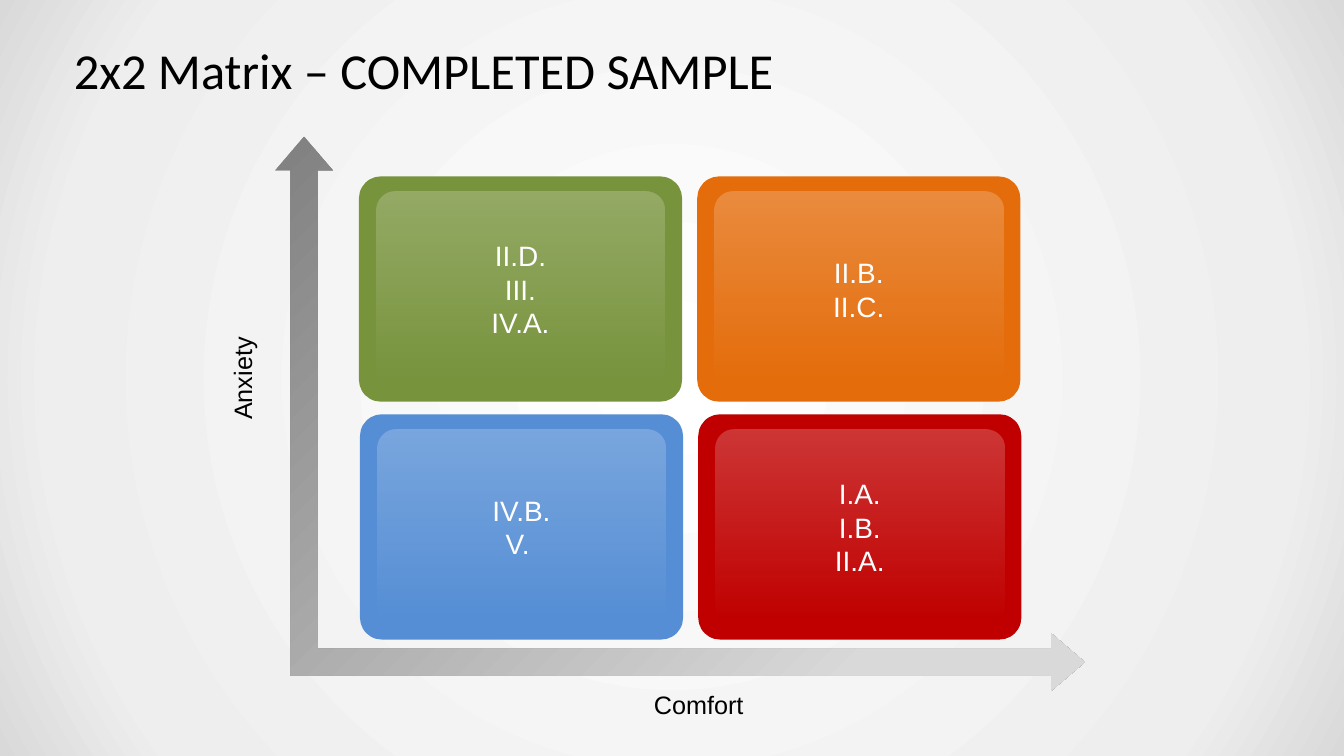
from lxml import etree
from pptx import Presentation, util as u
from pptx.dml.color import RGBColor
from pptx.enum import shapes, text
from pptx.oxml.ns import qn

# Content: quadrants as (column, row, colour, lines)
TITLE = "2x2 Matrix – COMPLETED SAMPLE"
QUADRANTS = [
    (0, 1, "blue", ["IV.B.", "V. "]),
    (1, 1, "red", ["I.A.", "I.B.", "II.A."]),
    (0, 0, "green", ["II.D.", "III.", "IV.A."]),
    (1, 0, "orange", ["II.B.", "II.C."]),
]
AXIS_LABELS = [
    ("Anxiety", (4.45, 6.67, 0.81, 1.76), "vert270", text.PP_ALIGN.LEFT),
    ("Comfort", (12.86, 13.62, 2, 0.71), "horz", text.PP_ALIGN.CENTER),
]
COLOURS = {
    "blue": "558ED5", "red": "C00000", "green": "77933C", "orange": "E46C0A",
    "white": "FFFFFF", "black": "000000", "pale": "EEEEEE",
    "light": "D9D9D9", "dark": "808080",
}

# Grid, in inches
WIDTH, HEIGHT = 26.66, 15
GRID_LEFT, GRID_TOP = 7.12, 3.5
COLUMN_STEP, ROW_STEP, ROW_SHIFT = 6.71, 4.72, 0.02
PANEL_WIDTH, PANEL_HEIGHT = 6.41, 4.47
GLOSS_X, GLOSS_Y = 0.34, 0.3
CORNER = 0.097


def inches(values):
    return [u.Inches(value) for value in values]


def set_gradient(fill, parent, stops, direction):
    """Put a gradient of (position, colour, opacity) stops on a shape or background."""
    fill.solid()
    fill.fore_color.rgb = RGBColor.from_string(COLOURS["white"])
    gradient = etree.Element(qn("a:gradFill"), rotWithShape="1")
    stop_list = etree.SubElement(gradient, qn("a:gsLst"))
    for position, colour, opacity in stops:
        stop = etree.SubElement(stop_list, qn("a:gs"), pos=str(position * 1000))
        colour_node = etree.SubElement(stop, qn("a:srgbClr"), val=COLOURS[colour])
        if opacity < 100:
            etree.SubElement(colour_node, qn("a:alpha"), val=str(opacity * 1000))
    if isinstance(direction, int):
        etree.SubElement(gradient, qn("a:lin"), ang=str(direction * 60000), scaled="0")
    else:
        path = etree.SubElement(gradient, qn("a:path"))
        path.set("path", "circle")
        sides = {side: str(share * 1000) for side, share in zip("ltrb", direction)}
        etree.SubElement(path, qn("a:fillToRect"), **sides)
    solid = parent.find(qn("a:solidFill"))
    parent.replace(solid, gradient)


def add_preset(container, kind, box, adjustments):
    shape = container.add_shape(kind, *inches(box))
    shape.shadow.inherit = False
    shape.line.fill.background()
    for index, value in enumerate(adjustments):
        shape.adjustments[index] = value
    return shape


def write_lines(shape, lines, size, colour, font="Arial",
                alignment=text.PP_ALIGN.CENTER, **frame_format):
    frame = shape.text_frame
    for name, value in frame_format.items():
        setattr(frame, name, value)
    font_format = {"name": font, "size": u.Pt(size)}
    for index, line in enumerate(lines):
        paragraph = frame.paragraphs[0] if index == 0 else frame.add_paragraph()
        paragraph.alignment = alignment
        run = paragraph.add_run()
        run.text = line
        for name, value in font_format.items():
            setattr(run.font, name, value)
        run.font.color.rgb = RGBColor.from_string(COLOURS[colour])


def add_quadrant(slide, column, row, colour, lines):
    left = GRID_LEFT + column * COLUMN_STEP + row * ROW_SHIFT
    top = GRID_TOP + row * ROW_STEP
    group = slide.shapes.add_group_shape()
    rounded = shapes.MSO_SHAPE.ROUNDED_RECTANGLE
    panel = add_preset(group.shapes, rounded,
                       (left, top, PANEL_WIDTH, PANEL_HEIGHT), [CORNER])
    panel.fill.solid()
    panel.fill.fore_color.rgb = RGBColor.from_string(COLOURS[colour])
    gloss = add_preset(group.shapes, rounded,
                       (left + GLOSS_X, top + GLOSS_Y,
                        PANEL_WIDTH - 2 * GLOSS_X, PANEL_HEIGHT - 2 * GLOSS_Y), [CORNER])
    set_gradient(gloss.fill, gloss.element.spPr,
                 [(0, "white", 0), (100, "white", 22)], 270)
    write_lines(gloss, lines, 40, "white", word_wrap=True,
                vertical_anchor=text.MSO_ANCHOR.MIDDLE)


def main():
    presentation = Presentation()
    presentation.slide_width, presentation.slide_height = inches((WIDTH, HEIGHT))
    slide = presentation.slides.add_slide(presentation.slide_layouts[6])

    # Background
    background = slide.background.fill
    background.solid()
    set_gradient(background, slide.element.find(".//" + qn("p:bgPr")),
                 [(0, "white", 100), (81, "pale", 100), (100, "light", 100)],
                 (50, 50, 50, 50))

    # Title
    margin = WIDTH * 0.05
    title = slide.shapes.add_textbox(*inches((margin, 0.6, WIDTH - 2 * margin, 1.56)))
    write_lines(title, [TITLE], 72, "black", "Calibri", text.PP_ALIGN.LEFT,
                word_wrap=True, vertical_anchor=text.MSO_ANCHOR.MIDDLE,
                margin_left=u.Inches(0.13), margin_right=u.Inches(0.13),
                margin_top=u.Inches(0.07), margin_bottom=u.Inches(0.07))

    # Axes
    axes = add_preset(slide.shapes, shapes.MSO_SHAPE.LEFT_UP_ARROW,
                      (5.46, 2.71, 16.06, 11), [0.049, 0.052, 0.061])
    axes.element.spPr.find(qn("a:xfrm")).set("flipH", "1")
    set_gradient(axes.fill, axes.element.spPr,
                 [(18, "light", 100), (100, "dark", 100)], (100, 100, 0, 0))
    for label, box, direction, alignment in AXIS_LABELS:
        label_box = slide.shapes.add_textbox(*inches(box))
        label_box.text_frame._txBody.bodyPr.set("vert", direction)
        write_lines(label_box, [label], 36, "black", alignment=alignment,
                    word_wrap=False, auto_size=text.MSO_AUTO_SIZE.SHAPE_TO_FIT_TEXT)

    # Quadrants
    for quadrant in QUADRANTS:
        add_quadrant(slide, *quadrant)

    presentation.save("out.pptx")


if __name__ == "__main__":
    main()
